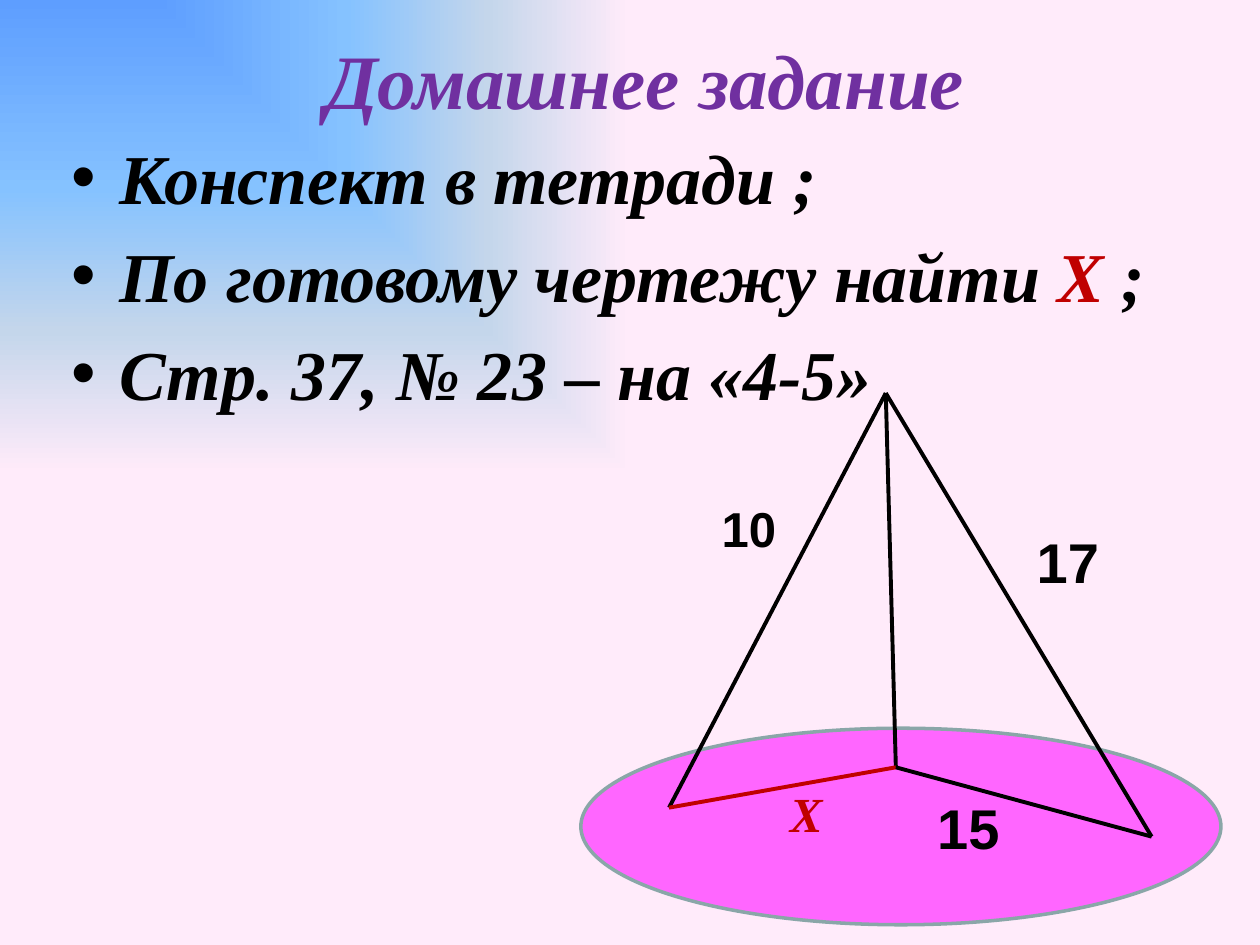
from dataclasses import dataclass

from lxml.etree import SubElement
from pptx import Presentation
from pptx.dml.color import RGBColor
from pptx.enum.shapes import MSO_CONNECTOR, MSO_SHAPE
from pptx.enum.text import MSO_ANCHOR, MSO_AUTO_SIZE, PP_ALIGN
from pptx.oxml import parse_xml
from pptx.oxml.ns import nsdecls, qn
from pptx.util import Inches, Pt


@dataclass(frozen=True)
class Theme:
    black: str = "000000"
    red: str = "C00000"
    purple: str = "7030A0"
    plane: str = "FF66FF"
    plane_edge: str = "8AA6A8"
    backdrop: tuple = ((0, "5E9EFF"), (40, "85C2FF"), (70, "C4D6EB"), (100, "FFEBFA"))
    serif: str = "Times New Roman"
    sans: str = "Arial"
    title: int = 44
    body: int = 40
    large: int = 32
    small: int = 28


theme = Theme()


def add_text(paragraphs, box, size, font=theme.serif, color=theme.black, italic=True,
             align=PP_ALIGN.LEFT, anchor=MSO_ANCHOR.TOP, wrap=True, gap=False, bullet=None):
    text_box = slide.shapes.add_textbox(*map(Inches, box))
    frame = text_box.text_frame
    frame.word_wrap = wrap
    frame.auto_size = MSO_AUTO_SIZE.NONE if wrap else MSO_AUTO_SIZE.SHAPE_TO_FIT_TEXT
    frame.vertical_anchor = anchor
    for index, pieces in enumerate(paragraphs):
        paragraph = frame.add_paragraph() if index else frame.paragraphs[0]
        paragraph.alignment = align
        properties = paragraph._p.get_or_add_pPr()
        if gap:
            spacing = SubElement(properties, qn("a:spcBef"))
            SubElement(spacing, qn("a:spcPct"), val="20000")
        if bullet:
            properties.set("marL", str(Inches(0.38)))
            properties.set("indent", str(Inches(-0.38)))
            SubElement(properties, qn("a:buFont"), typeface=theme.sans)
            SubElement(properties, qn("a:buChar"), char=bullet)
        for words, own_color in pieces:
            run = paragraph.add_run()
            run.text = words
            run.font.name = font
            run.font.size = Pt(size)
            run.font.bold = True
            run.font.italic = italic
            run.font.color.rgb = RGBColor.from_string(own_color or color)


deck = Presentation()
deck.slide_width = Inches(10)
deck.slide_height = Inches(7.5)
slide = deck.slides.add_slide(deck.slide_layouts[6])

stops = "".join(
    f'<a:gs pos="{position * 1000}"><a:srgbClr val="{color}"/></a:gs>'
    for position, color in theme.backdrop
)
slide.element.cSld.insert(0, parse_xml(
    f'<p:bg {nsdecls("p", "a")}><p:bgPr><a:gradFill rotWithShape="1"><a:gsLst>{stops}</a:gsLst>'
    '<a:path path="rect"><a:fillToRect r="100000" b="100000"/></a:path>'
    '</a:gradFill><a:effectLst/></p:bgPr></p:bg>'
))

plane = slide.shapes.add_shape(
    MSO_SHAPE.OVAL, Inches(4.61), Inches(5.78), Inches(5.08), Inches(1.56)
)
plane.shadow.inherit = False
plane.fill.solid()
plane.fill.fore_color.rgb = RGBColor.from_string(theme.plane)
plane.line.color.rgb = RGBColor.from_string(theme.plane_edge)
plane.line.width = Pt(2)

add_text([[("Домашнее задание", None)]], (0.62, 0, 9, 1.25), theme.title,
         color=theme.purple, align=PP_ALIGN.CENTER, anchor=MSO_ANCHOR.MIDDLE)
tasks = [
    [("Конспект в тетради ;", None)],
    [("По готовому чертежу найти ", None), ("Х ", theme.red), (";", None)],
    [("Стр. 37, № 23 – на «4-5»", None)],
]
add_text(tasks, (0.47, 1.02, 9, 4.95), theme.body, gap=True, bullet="•")

apex, foot = (7.03, 3.12), (7.11, 6.09)
left_end, right_end = (5.31, 6.41), (9.14, 6.64)
for start, end, color in [
    (apex, foot, theme.black),
    (apex, right_end, theme.black),
    (apex, left_end, theme.black),
    (foot, left_end, theme.red),
    (foot, right_end, theme.black),
]:
    segment = slide.shapes.add_connector(MSO_CONNECTOR.STRAIGHT, *map(Inches, start + end))
    segment.line.color.rgb = RGBColor.from_string(color)
    segment.line.width = Pt(2.25)
    SubElement(segment._element.spPr, qn("a:effectLst"))

for length, box, size, gap in [
    ("10", (5.63, 3.91, 0.64, 0.57), theme.small, False),
    ("17", (8.13, 4.14, 0.7, 0.64), theme.large, True),
    ("15", (7.34, 6.25, 0.7, 0.64), theme.large, True),
]:
    add_text([[(length, None)]], box, size, font=theme.sans, italic=False, wrap=False, gap=gap)
add_text([[("Х", None)]], (6.17, 6.17, 0.46, 0.57), theme.small, color=theme.red, wrap=False)

deck.save("out.pptx")
